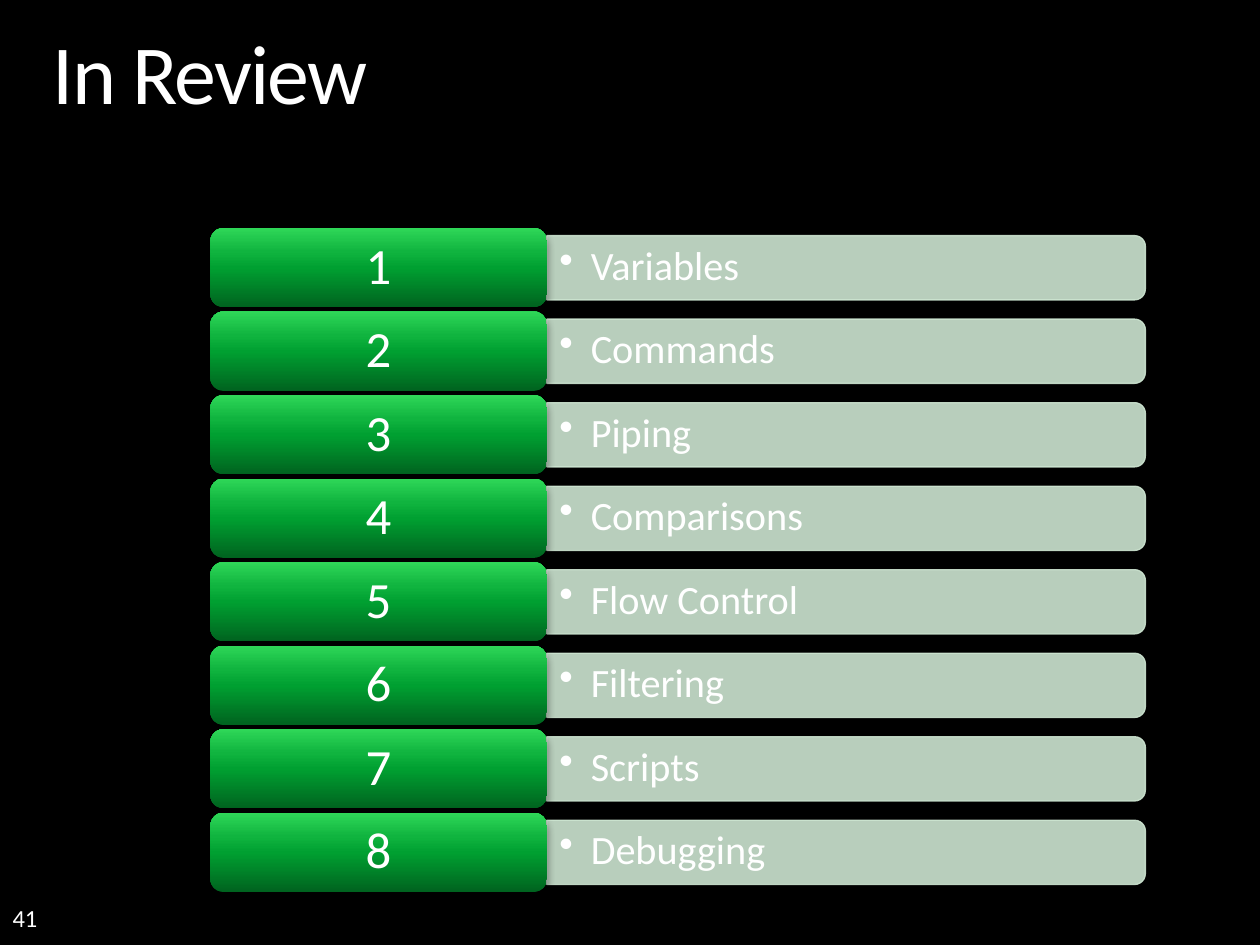
from dataclasses import dataclass

import pptx
import pptx.dml.color
import pptx.enum.shapes
import pptx.enum.text
import pptx.oxml.ns
import pptx.util
from lxml import etree
from pptx.util import Inches

FONT = "Calibri"
WHITE = "FFFFFF"
BAR_COLOR = "CDE5D1"
TILE_STOPS = ((0, "00631F"), (50, "00A031"), (70, "10B43F"), (100, "2FD758"))
TOPICS = ("Variables", "Commands", "Piping", "Comparisons",
          "Flow Control", "Filtering", "Scripts", "Debugging")

# Layout in inches
FIRST_TOP, LAST_TOP = 1.81, 6.45
PITCH = (LAST_TOP - FIRST_TOP) / (len(TOPICS) - 1)
TILE_LEFT, TILE_WIDTH, TILE_HEIGHT = 1.67, 2.67, 0.63
BAR_LEFT, BAR_WIDTH, BAR_HEIGHT = TILE_LEFT + TILE_WIDTH, 4.75, 0.51

ANCHOR = pptx.enum.text.MSO_ANCHOR
ALIGN = pptx.enum.text.PP_ALIGN
SHAPE = pptx.enum.shapes.MSO_SHAPE


@dataclass
class ReviewRow:
    number: int
    topic: str
    top: float


def color(value: str) -> pptx.dml.color.RGBColor:
    return pptx.dml.color.RGBColor.from_string(value)


def add_element(parent, tag: str, **attributes):
    element = etree.SubElement(parent, pptx.oxml.ns.qn(tag))
    for name, value in attributes.items():
        element.set(name, str(value))
    return element


def set_alpha(color_parent, percent: int) -> None:
    for node in color_parent.iter(pptx.oxml.ns.qn("a:srgbClr")):
        add_element(node, "a:alpha", val=percent * 1000)


def set_shadow(shape, blur: float, distance: float, alpha: int) -> None:
    shape.shadow.inherit = False
    effects = shape._element.spPr.find(pptx.oxml.ns.qn("a:effectLst"))
    shadow = add_element(effects, "a:outerShdw", blurRad=pptx.util.Pt(blur),
                         dist=pptx.util.Pt(distance), dir=90 * 60000, rotWithShape=0)
    add_element(shadow, "a:srgbClr", val="000000")
    set_alpha(shadow, alpha)


def set_text(shape, text: str, size: int, anchor, margins=(0, 0),
             align=ALIGN.LEFT, spacing: float = 0.9, bullet: bool = False):
    frame = shape.text_frame
    frame.word_wrap = True
    frame.vertical_anchor = anchor
    frame.margin_left = frame.margin_right = Inches(margins[0])
    frame.margin_top = frame.margin_bottom = Inches(margins[1])
    paragraph = frame.paragraphs[0]
    paragraph.text = text
    paragraph.alignment = align
    paragraph.line_spacing = spacing
    if bullet:
        properties = paragraph._p.get_or_add_pPr()
        properties.set("marL", str(Inches(0.25)))
        properties.set("indent", str(Inches(-0.25)))
        add_element(properties, "a:buChar", char="•")
    paragraph.font.name = FONT
    paragraph.font.size = pptx.util.Pt(size)
    paragraph.font.color.rgb = color(WHITE)
    return paragraph


def add_bar(slide, row: ReviewRow) -> None:
    top = row.top + (TILE_HEIGHT - BAR_HEIGHT) / 2
    # The upright shape turns a quarter so its rounded end faces right
    shift = (BAR_WIDTH - BAR_HEIGHT) / 2
    bar = slide.shapes.add_shape(
        SHAPE.ROUND_2_SAME_RECTANGLE, Inches(BAR_LEFT + shift), Inches(top - shift),
        Inches(BAR_HEIGHT), Inches(BAR_WIDTH))
    bar.rotation = 90
    bar.fill.solid()
    bar.fill.fore_color.rgb = color(BAR_COLOR)
    bar.line.color.rgb = color(BAR_COLOR)
    bar.line.width = pptx.util.Pt(0.75)
    set_alpha(bar._element.spPr, 90)
    set_shadow(bar, blur=4, distance=3, alpha=35)

    label = slide.shapes.add_textbox(Inches(BAR_LEFT), Inches(top + 0.02),
                                     Inches(4.72), Inches(0.46))
    set_text(label, row.topic, 23, ANCHOR.MIDDLE, (0.1, 0.05), bullet=True)


def add_tile(slide, row: ReviewRow) -> None:
    tile = slide.shapes.add_shape(
        SHAPE.ROUNDED_RECTANGLE, Inches(TILE_LEFT), Inches(row.top),
        Inches(TILE_WIDTH), Inches(TILE_HEIGHT))
    tile.fill.gradient()
    tile.fill.gradient_angle = 90
    stops = tile._element.spPr.find(".//" + pptx.oxml.ns.qn("a:gsLst"))
    for stop in list(stops):
        stops.remove(stop)
    for position, value in TILE_STOPS:
        stop = add_element(stops, "a:gs", pos=position * 1000)
        add_element(stop, "a:srgbClr", val=value)
    tile.line.fill.background()
    set_shadow(tile, blur=5, distance=3, alpha=45)
    set_text(tile, str(row.number), 29, ANCHOR.MIDDLE, (0.15, 0.09), ALIGN.CENTER)


def main() -> None:
    presentation = pptx.Presentation()
    presentation.slide_width, presentation.slide_height = Inches(10), Inches(7.5)
    slide = presentation.slides.add_slide(presentation.slide_layouts.get_by_name("Title Only"))
    slide.background.fill.solid()
    slide.background.fill.fore_color.rgb = color("000000")

    # Title
    title = slide.shapes.title
    title.left, title.top = Inches(0.42), Inches(0.25)
    title.width, title.height = Inches(9.16), Inches(0.73)
    paragraph = set_text(title, "In Review", 48, ANCHOR.TOP)
    paragraph.font._element.set("spc", "-100")
    title.text_frame.auto_size = pptx.enum.text.MSO_AUTO_SIZE.SHAPE_TO_FIT_TEXT

    # Numbered topics
    for index, topic in enumerate(TOPICS):
        row = ReviewRow(index + 1, topic, FIRST_TOP + index * PITCH)
        add_bar(slide, row)
        add_tile(slide, row)

    # Slide number
    number = slide.shapes.add_textbox(Inches(0.1), Inches(7), Inches(2.33), Inches(0.4))
    set_text(number, "41", 14, ANCHOR.BOTTOM, spacing=1.0)

    presentation.save("out.pptx")


if __name__ == "__main__":
    main()
